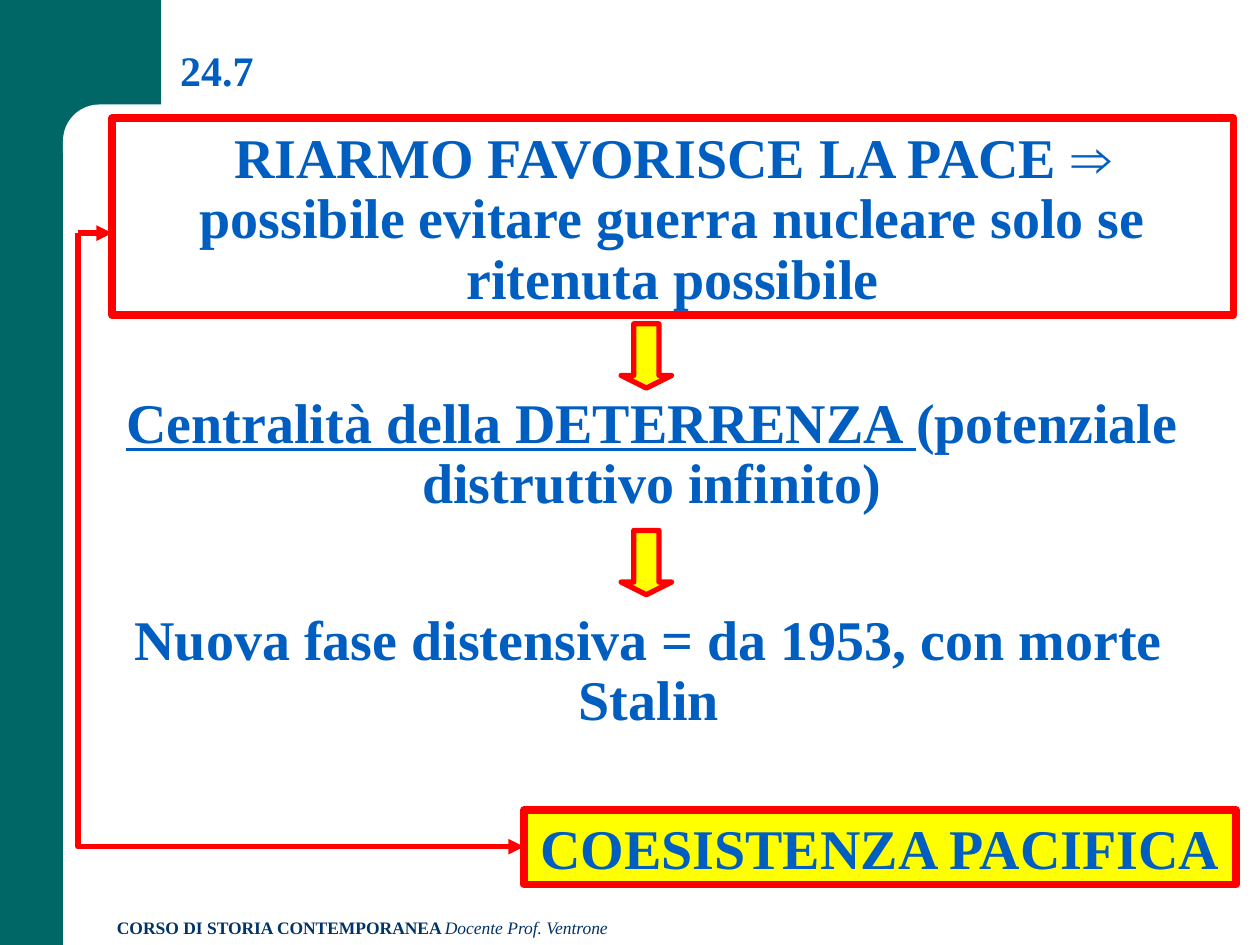
import pptx
import pptx.dml.color
import pptx.enum.shapes
import pptx.enum.text
import pptx.oxml
import pptx.oxml.ns
import pptx.util
from dataclasses import dataclass

SHAPE = pptx.enum.shapes.MSO_SHAPE
CONNECTOR = pptx.enum.shapes.MSO_CONNECTOR
ALIGN = pptx.enum.text.PP_ALIGN
ANCHOR = pptx.enum.text.MSO_ANCHOR
qn = pptx.oxml.ns.qn

CELL = 0.1  # inches: the slide is a grid of 100 columns by 75 rows
COLUMNS, ROWS = 100, 75


@dataclass(frozen=True)
class Theme:
    font: str = "Times New Roman"
    band: str = "006666"
    paper: str = "FFFFFF"
    text: str = "005EC0"
    footer: str = "003366"
    accent: str = "FF0000"
    highlight: str = "FFFF00"
    statement_size: int = 32
    title_size: int = 24
    footer_size: int = 10
    frame_width: float = 4.5
    arrow_width: float = 3
    line_spacing: float = 0.9


def cells(*counts):
    return [pptx.util.Inches(count * CELL) for count in counts]


def rgb(code):
    return pptx.dml.color.RGBColor.from_string(code)


class Board:
    """Draws on one slide in grid cells, with the theme's style."""

    def __init__(self, slide, theme):
        self.slide, self.theme = slide, theme

    def shape(self, kind, area, fill=None, border=0, adjustments=()):
        item = self.slide.shapes.add_shape(kind, *cells(*area))
        item.shadow.inherit = False
        if fill:
            item.fill.solid()
            item.fill.fore_color.rgb = rgb(fill)
        else:
            item.fill.background()
        if border:
            item.line.color.rgb = rgb(self.theme.accent)
            item.line.width = pptx.util.Pt(border)
        else:
            item.line.fill.background()
        for index, value in enumerate(adjustments):
            item.adjustments[index] = value
        return item

    def set_text(self, frame, runs, size, color, align=ALIGN.LEFT):
        """Fill the first paragraph; runs are (text, bold, italic, underline)."""
        paragraph = frame.paragraphs[0]
        paragraph.alignment = align
        paragraph.font.name = self.theme.font
        paragraph.font.size = pptx.util.Pt(size)
        paragraph.font.color.rgb = rgb(color)
        for text, bold, italic, underline in runs:
            run = paragraph.add_run()
            run.text = text
            run.font.bold = bold
            run.font.italic = italic
            run.font.underline = underline
        return paragraph

    def title(self, text, area):
        holder = self.slide.shapes.title
        holder.left, holder.top, holder.width, holder.height = cells(*area)
        frame = holder.text_frame
        frame.auto_size = pptx.enum.text.MSO_AUTO_SIZE.NONE
        frame.vertical_anchor = ANCHOR.BOTTOM
        paragraph = self.set_text(frame, [strong(text)], self.theme.title_size,
                                  self.theme.text)
        paragraph.line_spacing = self.theme.line_spacing

    def statement(self, runs, area, fill=None, framed=False, wrap=True):
        if framed:
            box = self.shape(SHAPE.RECTANGLE, area, fill, self.theme.frame_width)
        else:
            box = self.slide.shapes.add_textbox(*cells(*area))
        frame = box.text_frame
        frame.word_wrap = wrap
        frame.vertical_anchor = ANCHOR.MIDDLE
        frame.margin_top = pptx.util.Inches(0.11)
        paragraph = self.set_text(frame, runs, self.theme.statement_size,
                                  self.theme.text, ALIGN.CENTER)
        paragraph.line_spacing = self.theme.line_spacing

    def footer(self, runs, area):
        frame = self.slide.shapes.add_textbox(*cells(*area)).text_frame
        frame.word_wrap = True
        self.set_text(frame, runs, self.theme.footer_size, self.theme.footer)

    def down_arrow(self, area):
        self.shape(SHAPE.DOWN_ARROW, area, self.theme.highlight,
                   self.theme.arrow_width, (0.5, 0.25))

    def arrow(self, start, end, kind=CONNECTOR.STRAIGHT):
        line = self.slide.shapes.add_connector(kind, *cells(*start, *end))
        line.line.color.rgb = rgb(self.theme.accent)
        line.line.width = pptx.util.Pt(self.theme.arrow_width)
        properties = line._element.spPr
        outline = properties.find(qn("a:ln"))
        outline.append(outline.makeelement(qn("a:tailEnd"), {"type": "triangle"}))
        properties.append(properties.makeelement(qn("a:effectLst"), {}))
        return line

    def corner_arrow(self, start, end):
        """Run down from start, turn once, and run right to end."""
        (left, top), (right, bottom) = start, end
        middle_x, middle_y = (left + right) / 2, (top + bottom) / 2
        half_width, half_height = (bottom - top) / 2, (right - left) / 2
        # The frame is the one that a quarter turn brings into place.
        line = self.arrow((middle_x - half_width, middle_y - half_height),
                          (middle_x + half_width, middle_y + half_height),
                          CONNECTOR.ELBOW)
        properties = line._element.spPr
        properties.find(qn("a:prstGeom")).set("prst", "bentConnector2")
        frame = properties.find(qn("a:xfrm"))
        frame.set("rot", str(270 * 60000))
        frame.set("flipH", "1")


def strong(text, underline=False):
    return text, True, False, underline


def main():
    theme = Theme()
    deck = pptx.Presentation()
    deck.slide_width, deck.slide_height = cells(COLUMNS, ROWS)
    board = Board(deck.slides.add_slide(deck.slide_layouts[5]), theme)

    board.shape(SHAPE.RECTANGLE, (0, 0, 5, ROWS), theme.band)
    board.shape(SHAPE.RECTANGLE, (0, 0, 12.8, 11.7), theme.band)
    board.shape(SHAPE.ROUNDED_RECTANGLE, (5, 8.3, 59.2, 6.7), theme.paper,
                adjustments=(0.43,))
    board.footer([strong("CORSO DI STORIA CONTEMPORANEA "),
                  ("Docente Prof. Ventrone", False, True, False)],
                 (8.3, 72.3, 61.7, 2.7))
    board.title("24.7", (13.3, 3.1, 9.6, 5))

    board.statement([strong("RIARMO FAVORISCE LA PACE ⇒ possibile evitare guerra "
                            "nucleare solo se ritenuta possibile")],
                    (8.9, 9.4, 89, 15.6), framed=True)
    board.statement([strong("Centralità della DETERRENZA ", underline=True),
                     strong("(potenziale distruttivo infinito)")],
                    (6.2, 30.5, 91.1, 10.7))
    board.statement([strong("Nuova fase distensiva = da 1953, con morte Stalin")],
                    (6.2, 47.7, 90.6, 10.7))
    board.statement([strong("COESISTENZA PACIFICA")], (41.6, 64.3, 56.5, 5.9),
                    fill=theme.highlight, framed=True, wrap=False)

    for top in (25.7, 42.1):
        board.down_arrow((49.3, top, 4, 5.1))
    link_start = (6.2, 18.5)
    board.corner_arrow(link_start, (41.6, 67.2))
    board.arrow(link_start, (8.9, 18.5))

    deck.save("out.pptx")


if __name__ == "__main__":
    main()
